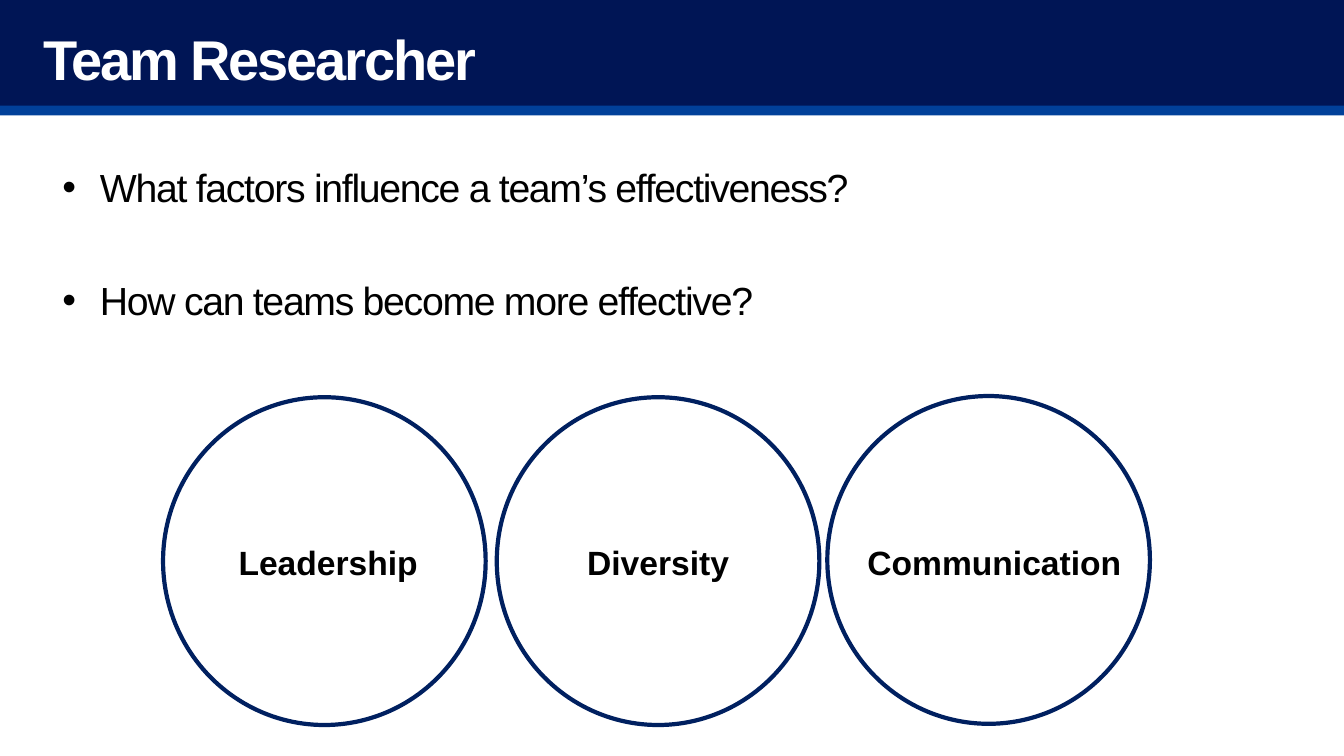
from pptx import Presentation
from pptx.dml.color import RGBColor
from pptx.enum.shapes import MSO_SHAPE
from pptx.enum.text import MSO_ANCHOR, PP_ALIGN
from pptx.oxml.ns import qn
from pptx.util import Cm, Pt
from lxml import etree

RECT, OVAL = MSO_SHAPE.RECTANGLE, MSO_SHAPE.OVAL
LEFT, CENTER = PP_ALIGN.LEFT, PP_ALIGN.CENTER
TOP, MIDDLE = MSO_ANCHOR.TOP, MSO_ANCHOR.MIDDLE
NAVY = RGBColor(0x00, 0x15, 0x55)
BLUE = RGBColor(0x01, 0x40, 0x99)
RING = RGBColor(0x00, 0x20, 0x60)
WHITE = RGBColor(0xFF, 0xFF, 0xFF)
BLACK = RGBColor(0x00, 0x00, 0x00)
WIDTH, HEIGHT = 33.87, 19.05


def add_text(tf, text, size=24, color=BLACK, bold=False, align=LEFT,
             spacing=0, line=None, before=0, bullet=False, first=True):
    """Write one paragraph of text into a text frame."""
    p = tf.paragraphs[0] if first else tf.add_paragraph()
    p.alignment = align
    if line:
        p.line_spacing = line
    if before:
        p.space_before = Pt(before)
    if bullet:
        pPr = p._p.get_or_add_pPr()
        pPr.set("marL", str(Cm(0.95)))
        pPr.set("indent", str(-Cm(0.95)))
        etree.SubElement(pPr, qn("a:buFont")).set("typeface", "Arial")
        etree.SubElement(pPr, qn("a:buChar")).set("char", "•")
    r = p.add_run()
    r.text = text
    r.font.name, r.font.size, r.font.bold = "Arial", Pt(size), bold
    r.font.color.rgb = color
    if spacing:
        r._r.get_or_add_rPr().set("spc", str(round(spacing * 100)))


class SlideBuilder:
    """Hold the current slide and draw its elements."""

    def __init__(self, slide):
        self.shapes = slide.shapes

    def shape(self, kind, x, y, w, h, fill=None, line=None, weight=0.75):
        """Add a preset shape with an optional fill and outline."""
        sp = self.shapes.add_shape(kind, Cm(x), Cm(y), Cm(w), Cm(h))
        sp.shadow.inherit = False
        if fill is None:
            sp.fill.background()
        else:
            sp.fill.solid()
            sp.fill.fore_color.rgb = fill
        if line is None:
            sp.line.fill.background()
        else:
            sp.line.color.rgb = line
            sp.line.width = Pt(weight)
        return sp

    def text_box(self, x, y, w, h):
        """Add a wrapping text box and return its text frame."""
        tf = self.shapes.add_textbox(Cm(x), Cm(y), Cm(w), Cm(h)).text_frame
        tf.word_wrap = True
        tf.vertical_anchor = TOP
        return tf

    def factor(self, text, x, y, label_x, label_w):
        """Add a ring with a bold label across its middle."""
        label = self.shape(RECT, label_x, 13.54, label_w, 1.27, line=WHITE)
        label.text_frame.word_wrap = True
        label.text_frame.vertical_anchor = MIDDLE
        add_text(label.text_frame, text, bold=True, align=CENTER)
        self.shape(OVAL, x, y, 8.13, 8.26, line=RING, weight=3)


def main():
    """Build the slide and save it."""
    prs = Presentation()
    prs.slide_width, prs.slide_height = Cm(WIDTH), Cm(HEIGHT)
    s = SlideBuilder(prs.slides.add_slide(prs.slide_layouts[6]))

    s.shape(RECT, 0, 0, WIDTH, 2.67, fill=NAVY)
    s.shape(RECT, 0, 2.66, WIDTH, 0.25, fill=BLUE)
    add_text(s.text_box(0.84, 0.81, 16.94, 1.63), "Team Researcher",
             size=40, color=WHITE, bold=True, spacing=-1.5, line=0.8)

    questions = ["What factors influence a team’s effectiveness?",
                 "How can teams become more effective?"]
    tf = s.text_box(1.32, 4, 21.87, 4.18)
    for i, question in enumerate(questions):
        add_text(tf, question, size=28, spacing=-0.9, bullet=True,
                 before=47 if i else 0, first=i == 0)

    factors = [("Leadership", 4.11, 10.01, 3.94, 8.66),
               ("Diversity", 12.52, 10.01, 12.65, 7.87),
               ("Communication", 20.85, 9.98, 20.73, 8.66)]
    for factor in factors:
        s.factor(*factor)

    prs.save("out.pptx")


if __name__ == "__main__":
    main()
